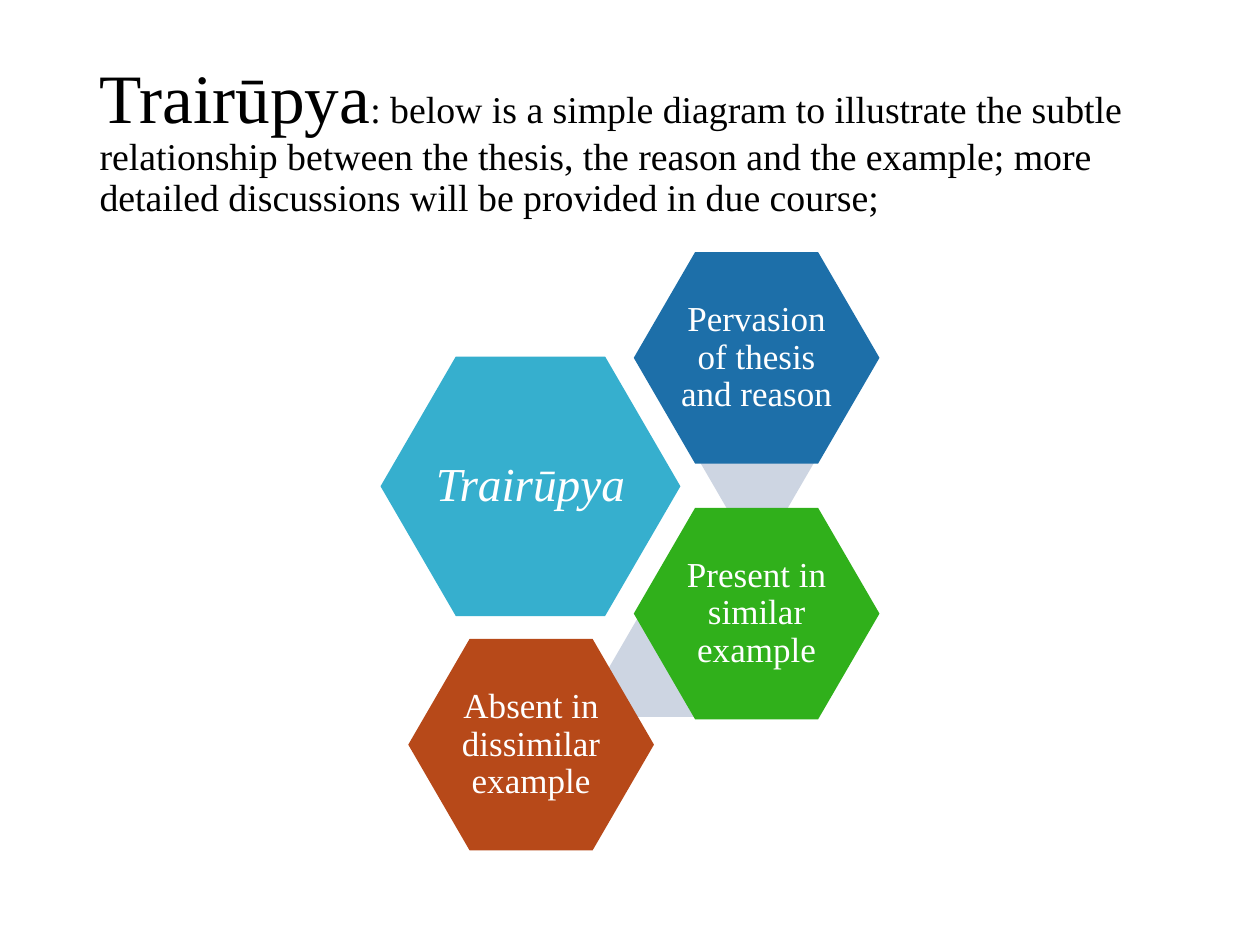
"""Build the Trairūpya slide: a title above a cluster of labelled hexagons."""
from dataclasses import dataclass

from pptx import Presentation
from pptx.dml.color import RGBColor
from pptx.enum.shapes import MSO_SHAPE
from pptx.enum.text import MSO_ANCHOR, MSO_AUTO_SIZE, PP_ALIGN
from pptx.util import Inches, Pt


@dataclass(frozen=True)
class Theme:
    font: str = "Times New Roman"
    ink: str = "000000"
    label: str = "FFFFFF"
    link: str = "CDD5E2"
    core: str = "36AFCE"
    pervasion: str = "1D6FA9"
    present: str = "30B01B"
    absent: str = "B74919"
    term_size: float = 39.6
    intro_size: float = 21.6
    core_size: float = 27
    reason_size: float = 20


theme = Theme()


def add_run(paragraph, text, size, color, italic=None):
    run = paragraph.add_run()
    run.text = text
    run.font.name = theme.font
    run.font.size = Pt(size)
    run.font.italic = italic
    run.font.color.rgb = RGBColor.from_string(color)


def add_hexagon(left, top, width, height, color, slant):
    hexagon = slide.shapes.add_shape(
        MSO_SHAPE.HEXAGON, Inches(left), Inches(top), Inches(width), Inches(height))
    hexagon.adjustments[0] = slant
    hexagon.shadow.inherit = False
    hexagon.fill.solid()
    hexagon.fill.fore_color.rgb = RGBColor.from_string(color)
    hexagon.line.fill.background()
    return hexagon


prs = Presentation()
prs.slide_width, prs.slide_height = Inches(10), Inches(7.5)
slide = prs.slides.add_slide(prs.slide_layouts[5])

title = slide.shapes.title
title.left, title.top = Inches(0.69), Inches(0.4)
title.width, title.height = Inches(8.62), Inches(1.45)
title.text_frame.auto_size = MSO_AUTO_SIZE.NONE
title.text_frame.vertical_anchor = MSO_ANCHOR.MIDDLE
heading = title.text_frame.paragraphs[0]
heading.alignment = PP_ALIGN.LEFT
heading.line_spacing = 0.9
add_run(heading, "Trairūpya", theme.term_size, theme.ink)
add_run(heading, ": below is a simple diagram to illustrate the subtle relationship "
        "between the thesis, the reason and the example; more detailed discussions "
        "will be provided in due course;", theme.intro_size, theme.ink)

for left, top in [(5.56, 3.29), (4.83, 4.92)]:
    add_hexagon(left, top, 0.9, 0.77, theme.link, 0.29)

core_box, reason_box = (2.38, 2.06), (1.95, 1.68)
labelled = [
    ("Trairūpya", 3.02, 2.83, core_box, theme.core, theme.core_size, 0.04, True),
    ("Pervasion of thesis and reason", 5.03, 2, reason_box,
     theme.pervasion, theme.reason_size, 0.03, None),
    ("Present in similar example", 5.03, 4.03, reason_box,
     theme.present, theme.reason_size, 0.03, None),
    ("Absent in dissimilar example", 3.24, 5.07, reason_box,
     theme.absent, theme.reason_size, 0.03, None),
]
for text, left, top, box, color, size, inset, italic in labelled:
    frame = add_hexagon(left, top, *box, color, 0.29).text_frame
    frame.word_wrap = True
    frame.vertical_anchor = MSO_ANCHOR.MIDDLE
    frame.margin_left = frame.margin_right = Inches(inset)
    frame.margin_top = frame.margin_bottom = Inches(inset)
    caption = frame.paragraphs[0]
    caption.alignment = PP_ALIGN.CENTER
    caption.line_spacing = 0.9
    add_run(caption, text, size, theme.label, italic)

prs.save("out.pptx")
